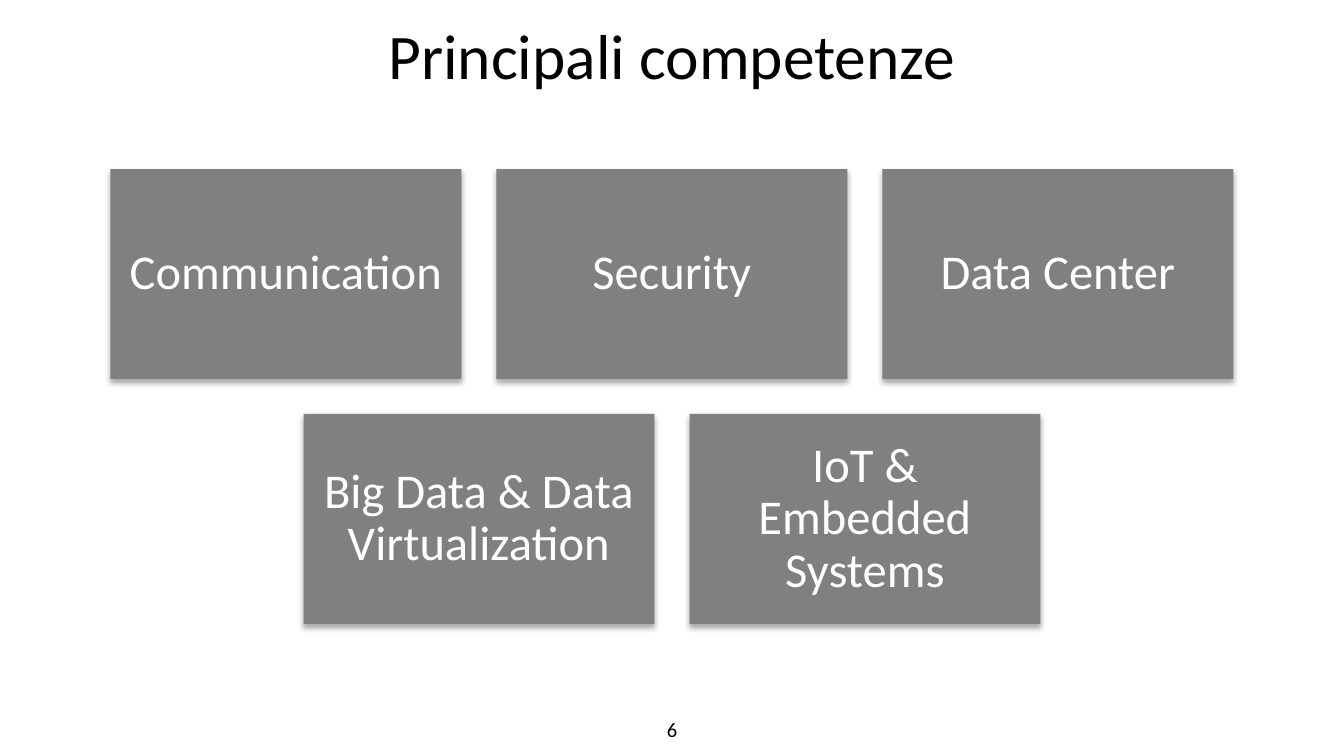
from dataclasses import dataclass

from lxml import etree
from pptx import Presentation
from pptx.dml.color import RGBColor
from pptx.enum.shapes import MSO_SHAPE
from pptx.enum.text import MSO_ANCHOR, PP_ALIGN
from pptx.oxml.ns import qn
from pptx.util import Emu, Pt

RECTANGLE = MSO_SHAPE.RECTANGLE
MIDDLE = MSO_ANCHOR.MIDDLE
CENTER = PP_ALIGN.CENTER

EMU_PER_PX = 914400 / 134.4
SLIDE_W, SLIDE_H = 1344, 756
CARD_W, CARD_H, GAP = 351, 210, 35
CARDS_TOP = 169

SKILL_ROWS = [
    ["Communication", "Security", "Data Center"],
    ["Big Data & Data Virtualization", "IoT & Embedded Systems"],
]


@dataclass(frozen=True)
class Theme:
    font: str = "Calibri"
    ink: RGBColor = RGBColor(0x00, 0x00, 0x00)
    card: RGBColor = RGBColor(0x80, 0x80, 0x80)
    card_text: RGBColor = RGBColor(0xFF, 0xFF, 0xFF)
    title_size: int = 34
    card_size: int = 26
    number_size: int = 11


THEME = Theme()


def px(n):
    return Emu(round(n * EMU_PER_PX))


def box(x, y, w, h):
    return px(x), px(y), px(w), px(h)


def set_text(shape, text, size, color, inset_x, inset_y, line_spacing=1.0):
    tf = shape.text_frame
    tf.word_wrap = True
    tf.vertical_anchor = MIDDLE
    tf.margin_left = tf.margin_right = px(inset_x)
    tf.margin_top = tf.margin_bottom = px(inset_y)
    p = tf.paragraphs[0]
    p.text = text
    p.alignment = CENTER
    p.line_spacing = line_spacing
    p.font.name = THEME.font
    p.font.size = Pt(size)
    p.font.color.rgb = color


def add_label(s, text, bounds, size):
    tb = s.shapes.add_textbox(*box(*bounds))
    set_text(tb, text, size, THEME.ink, 12, 6)


def add_soft_shadow(shape):
    """Give the shape a faint shadow that falls straight down."""
    shape.shadow.inherit = False
    effects = shape._element.spPr.find(qn("a:effectLst"))
    shadow = etree.SubElement(
        effects, qn("a:outerShdw"), blurRad=str(Pt(3.1)), dist=str(Pt(1.8)),
        dir="5400000", rotWithShape="0")
    color = etree.SubElement(shadow, qn("a:srgbClr"), val="000000")
    etree.SubElement(color, qn("a:alpha"), val="35000")


def add_card(s, text, x, y):
    card = s.shapes.add_shape(RECTANGLE, *box(x, y, CARD_W, CARD_H))
    card.fill.solid()
    card.fill.fore_color.rgb = THEME.card
    card.line.fill.background()
    add_soft_shadow(card)
    set_text(card, text, THEME.card_size, THEME.card_text, 15, 15, 0.9)


def add_card_rows(s, rows):
    """Lay out each row of cards centred on the slide."""
    for i, row in enumerate(rows):
        row_w = len(row) * (CARD_W + GAP) - GAP
        left = (SLIDE_W - row_w) / 2
        for j, text in enumerate(row):
            add_card(s, text, left + j * (CARD_W + GAP),
                     CARDS_TOP + i * (CARD_H + GAP))


def main():
    prs = Presentation()
    prs.slide_width, prs.slide_height = px(SLIDE_W), px(SLIDE_H)
    s = prs.slides.add_slide(prs.slide_layouts[6])
    add_label(s, "Principali competenze", (0, 0, SLIDE_W, 108), THEME.title_size)
    add_label(s, "6", (644, 710, 56, 38), THEME.number_size)
    add_card_rows(s, SKILL_ROWS)
    prs.save("out.pptx")


if __name__ == "__main__":
    main()
